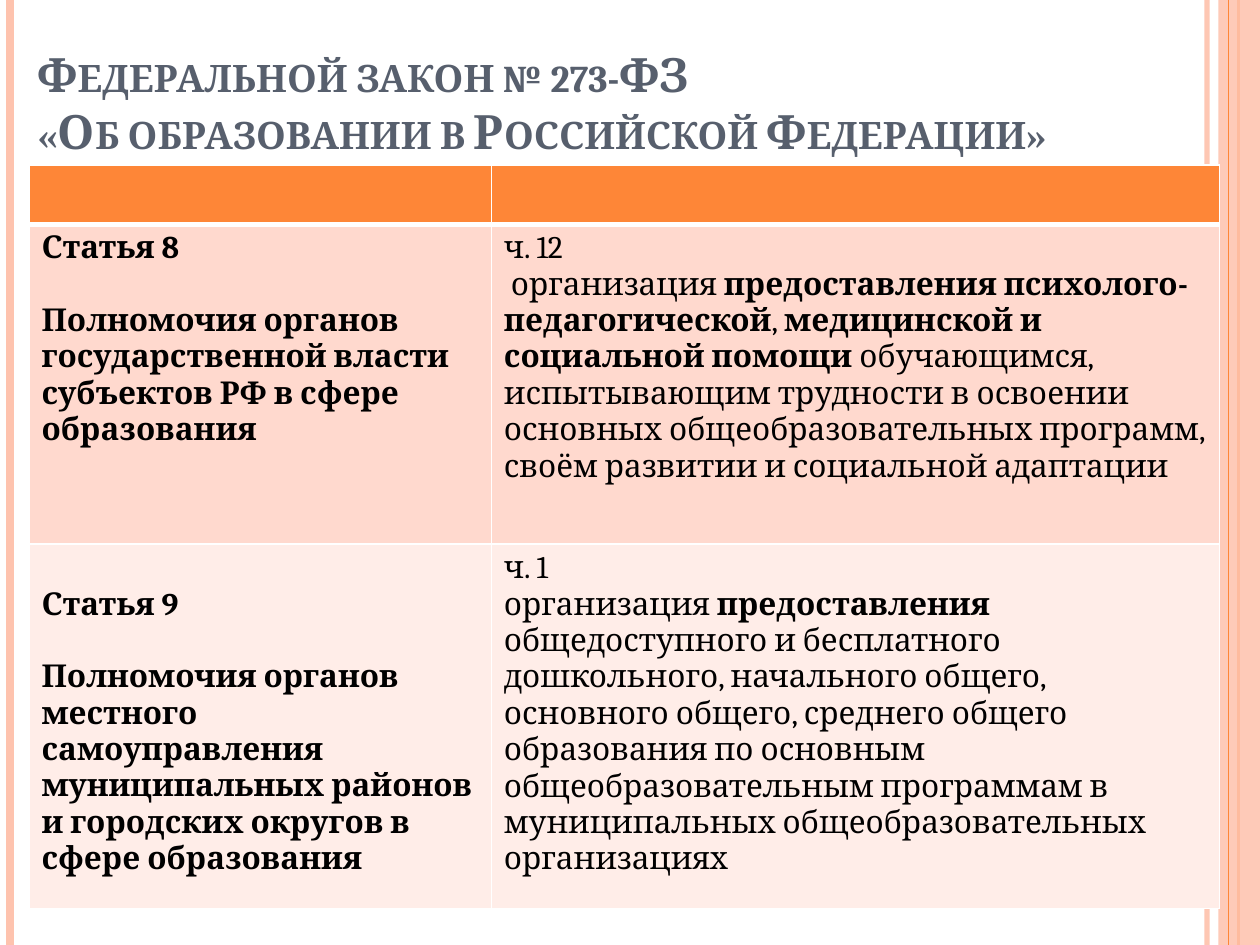
from dataclasses import dataclass

from lxml.etree import SubElement
from pptx import Presentation
from pptx.dml.color import RGBColor
from pptx.enum.shapes import MSO_CONNECTOR, MSO_SHAPE
from pptx.enum.text import MSO_ANCHOR
from pptx.oxml import parse_xml
from pptx.oxml.ns import nsdecls, qn
from pptx.util import Inches, Pt


@dataclass(frozen=True)
class Theme:
    font: str = "Cambria"
    title_size: float = 27
    body_size: float = 18
    title: str = "575F6D"
    text: str = "000000"
    accent: str = "FE8637"
    stripe: str = "FEC3AE"
    border: str = "FFFFFF"
    row_fills: tuple = ("FE8637", "FFD9CE", "FFEDE8")
    blank_line: float = 20.75


class SlideBuilder:
    def __init__(self, slide, theme):
        self.slide = slide
        self.theme = theme

    def set_alpha(self, element, percent):
        color = next(element.iter(qn("a:srgbClr")))
        SubElement(color, qn("a:alpha"), val=str(percent * 1000))

    def vertical_line(self, x, color, width, alpha=100):
        line = self.slide.shapes.add_connector(
            MSO_CONNECTOR.STRAIGHT, Inches(x), Inches(0), Inches(x), Inches(7.5))
        line.line.color.rgb = RGBColor.from_string(color)
        line.line.width = Pt(width)
        properties = line._element.spPr
        if alpha < 100:
            self.set_alpha(properties, alpha)
        SubElement(properties, qn("a:effectLst"))

    def band(self, left, top, width, height, color, alpha):
        shape = self.slide.shapes.add_shape(
            MSO_SHAPE.RECTANGLE, Inches(left), Inches(top), Inches(width), Inches(height))
        shape.shadow.inherit = False
        shape.fill.solid()
        shape.fill.fore_color.rgb = RGBColor.from_string(color)
        shape.line.fill.background()
        self.set_alpha(shape._element.spPr, alpha)

    def run(self, paragraph, text, size, color, bold):
        run = paragraph.add_run()
        run.text = text
        run.font.name = self.theme.font
        run.font.size = Pt(size)
        run.font.bold = bold
        run.font.color.rgb = RGBColor.from_string(color)
        return run

    def title(self, left, top, width, height, lines):
        box = self.slide.shapes.add_textbox(
            Inches(left), Inches(top), Inches(width), Inches(height))
        frame = box.text_frame
        frame.word_wrap = True
        frame.vertical_anchor = MSO_ANCHOR.BOTTOM
        paragraph = frame.paragraphs[0]
        for index, line in enumerate(lines):
            if index:
                paragraph.add_line_break()
            run = self.run(paragraph, line, self.theme.title_size, self.theme.title, True)
            run.font._element.set("cap", "small")

    def cell_borders(self, cell, bottom):
        properties = cell._tc.get_or_add_tcPr()
        sides = (("lnL", 1), ("lnR", 1), ("lnT", 1), ("lnB", bottom))
        for position, (side, width) in enumerate(sides):
            properties.insert(position, parse_xml(
                f'<a:{side} {nsdecls("a")} w="{Pt(width)}"><a:solidFill>'
                f'<a:srgbClr val="{self.theme.border}"/></a:solidFill></a:{side}>'))

    def cell_text(self, cell, paragraphs, gap):
        frame = cell.text_frame
        for index, runs in enumerate(paragraphs):
            paragraph = frame.add_paragraph() if index else frame.paragraphs[0]
            if index:
                paragraph.space_before = Pt(gap)
            for text, bold in runs:
                self.run(paragraph, text, self.theme.body_size, self.theme.text, bold)

    def table(self, left, top, columns, heights, rows):
        frame = self.slide.shapes.add_table(
            len(heights), len(columns), Inches(left), Inches(top),
            Inches(sum(columns)), Inches(sum(heights)))
        table = frame.table
        for column, width in zip(table.columns, columns):
            column.width = Inches(width)
        for index, (height, contents) in enumerate(zip(heights, rows)):
            table.rows[index].height = Inches(height)
            for column, paragraphs in enumerate(contents):
                cell = table.cell(index, column)
                cell.fill.solid()
                cell.fill.fore_color.rgb = RGBColor.from_string(self.theme.row_fills[index])
                self.cell_borders(cell, bottom=1 if index else 3)
                # Article names are set one line apart from their headings
                self.cell_text(cell, paragraphs, 0 if column else self.theme.blank_line)
        return table


TITLE = ("Федеральной закон № 273-ФЗ", "«Об образовании в Российской Федерации»")

ROWS = (
    ((), ()),
    (
        (
            (("Статья 8", True),),
            (("Полномочия органов государственной власти субъектов РФ "
              "в сфере образования", True),),
        ),
        (
            (("ч. 12", False),),
            (
                (" организация ", False),
                ("предоставления психолого-педагогической", True),
                (", ", False),
                ("медицинской и социальной помощи ", True),
                ("обучающимся, испытывающим трудности в освоении основных "
                 "общеобразовательных программ, своём развитии и социальной "
                 "адаптации", False),
            ),
        ),
    ),
    (
        (
            (("Статья 9", True),),
            (("Полномочия органов местного самоуправления муниципальных районов "
              "и городских округов в сфере образования", True),),
        ),
        (
            (("ч. 1", False),),
            (
                ("организация ", False),
                ("предоставления", True),
                (" общедоступного и бесплатного дошкольного, начального общего, "
                 "основного общего, среднего общего образования по основным "
                 "общеобразовательным программам в муниципальных "
                 "общеобразовательных организациях", False),
            ),
        ),
    ),
)


def main():
    presentation = Presentation()
    presentation.slide_width = Inches(10)
    presentation.slide_height = Inches(7.5)
    slide = presentation.slides.add_slide(presentation.slide_layouts[6])
    theme = Theme()
    builder = SlideBuilder(slide, theme)

    # Side stripes
    builder.vertical_line(9.58, theme.stripe, 3, alpha=93)
    builder.vertical_line(0.08, theme.stripe, 4.5)
    builder.vertical_line(9.83, theme.accent, 1.5)
    builder.band(9.67, 0, 0.33, 7.5, theme.stripe, alpha=87)
    builder.vertical_line(9.75, theme.accent, 0.75)

    # Heading
    builder.title(0.2, 0.3, 9.45, 1.01, TITLE)

    # Articles of the law
    table = builder.table(0.23, 1.31, (3.67, 5.78), (0.47, 2.54, 2.89), ROWS)
    table.cell(2, 0).margin_top = Inches(0.05) + Pt(theme.blank_line)

    presentation.save("out.pptx")


if __name__ == "__main__":
    main()
